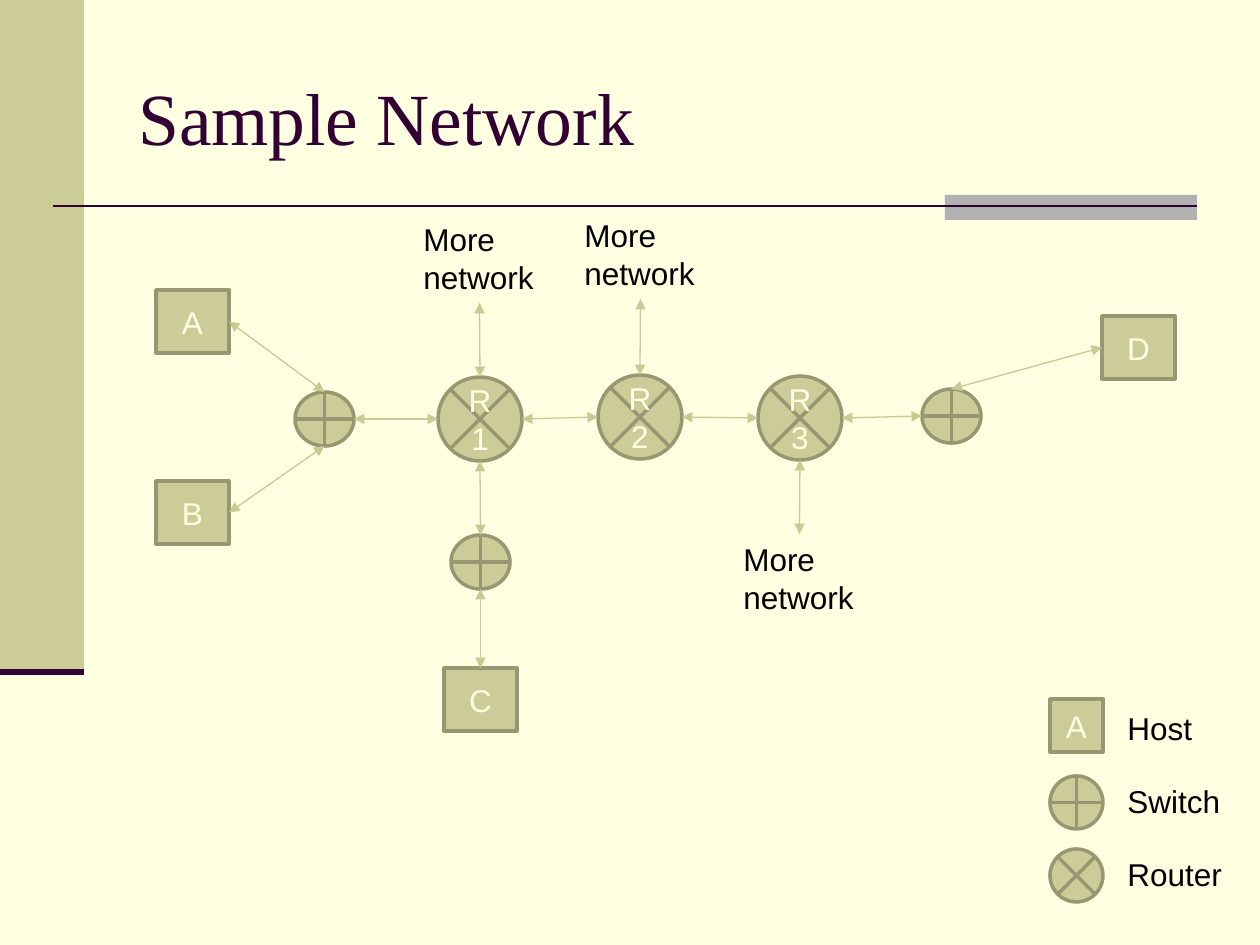
from dataclasses import dataclass
from enum import IntEnum

from pptx import Presentation
from pptx.dml.color import RGBColor
from pptx.enum.shapes import MSO_CONNECTOR, MSO_SHAPE, MSO_SHAPE_TYPE
from pptx.enum.text import MSO_ANCHOR, PP_ALIGN
from pptx.oxml.ns import qn
from pptx.util import Emu, Pt
from lxml.etree import SubElement

CREAM = RGBColor(0xFF, 0xFF, 0xE1)
KHAKI = RGBColor(0xCC, 0xCC, 0x99)
OLIVE = RGBColor(0x97, 0x97, 0x71)
LINK = RGBColor(0xC9, 0xC9, 0x94)
GRAY = RGBColor(0xB2, 0xB2, 0xB2)
PLUM = RGBColor(0x33, 0x00, 0x33)
BLACK = RGBColor(0x00, 0x00, 0x00)

HOST = MSO_SHAPE.RECTANGLE
SWITCH = MSO_SHAPE.FLOWCHART_OR
ROUTER = MSO_SHAPE.FLOWCHART_SUMMING_JUNCTION
PIXELS_PER_INCH = 126


class Side(IntEnum):
    TOP = 0
    LEFT = 1
    BOTTOM = 2
    RIGHT = 3


@dataclass(frozen=True)
class Node:
    name: str
    kind: MSO_SHAPE
    left: int
    top: int
    width: int
    height: int
    label: str = ""


@dataclass(frozen=True)
class Label:
    name: str
    text: str
    left: int
    top: int
    width: int
    height: int


@dataclass(frozen=True)
class Link:
    start: str
    start_side: Side
    end: str
    end_side: Side


def host(name: str, left: int, top: int) -> Node:
    return Node(name, HOST, left, top, 73, 63, name)


def switch(name: str, left: int, top: int) -> Node:
    return Node(name, SWITCH, left, top, 59, 54)


def router(name: str, left: int, top: int) -> Node:
    return Node(name, ROUTER, left, top, 84, 84, name)


def legend_node(name: str, kind: MSO_SHAPE, top: int, label: str = "") -> Node:
    return Node(name, kind, 1050, top, 53, 53, label)


def more_network(name: str, left: int, top: int) -> Label:
    return Label(name, "More\nnetwork", left, top, 137, 89)


NODES = [
    host("A", 156, 290), host("B", 156, 481),
    host("C", 444, 668), host("D", 1102, 316),
    router("R1", 438, 377), router("R2", 598, 375), router("R3", 758, 376),
    switch("west", 295, 392), switch("east", 922, 389), switch("south", 451, 535),
    legend_node("legend host", HOST, 699, "A"),
    legend_node("legend switch", SWITCH, 776),
    legend_node("legend router", ROUTER, 849),
]
LABELS = [
    more_network("above R1", 411, 214),
    more_network("above R2", 572, 210),
    more_network("below R3", 731, 534),
    Label("host label", "Host", 1115, 703, 91, 50),
    Label("switch label", "Switch", 1115, 776, 120, 50),
    Label("router label", "Router", 1115, 849, 121, 50),
]
LINKS = [
    Link("A", Side.RIGHT, "west", Side.TOP),
    Link("B", Side.RIGHT, "west", Side.BOTTOM),
    Link("west", Side.RIGHT, "R1", Side.LEFT),
    Link("R1", Side.RIGHT, "R2", Side.LEFT),
    Link("R2", Side.RIGHT, "R3", Side.LEFT),
    Link("R3", Side.RIGHT, "east", Side.LEFT),
    Link("east", Side.TOP, "D", Side.LEFT),
    Link("C", Side.TOP, "south", Side.BOTTOM),
    Link("south", Side.TOP, "R1", Side.BOTTOM),
    Link("R1", Side.TOP, "above R1", Side.BOTTOM),
    Link("R2", Side.TOP, "above R2", Side.BOTTOM),
    Link("below R3", Side.TOP, "R3", Side.BOTTOM),
]


def px(length: int) -> Emu:
    return Emu(round(length * 914400 / PIXELS_PER_INCH))


def set_text(shape, text: str, color: RGBColor, size: int = 18,
             font_name: str = "Arial", alignment=PP_ALIGN.LEFT) -> None:
    shape.text_frame.text = text
    for paragraph in shape.text_frame.paragraphs:
        paragraph.alignment = alignment
        for run in paragraph.runs:
            run.font.name = font_name
            run.font.size = Pt(size)
            run.font.color.rgb = color


def add_block(slide, kind, left: int, top: int, width: int, height: int, fill: RGBColor):
    """Add a filled preset shape without line or shadow."""
    shape = slide.shapes.add_shape(kind, px(left), px(top), px(width), px(height))
    shape.shadow.inherit = False
    shape.fill.solid()
    shape.fill.fore_color.rgb = fill
    shape.line.fill.background()
    return shape


def add_node(slide, node: Node):
    shape = add_block(slide, node.kind, node.left, node.top, node.width, node.height, KHAKI)
    shape.line.color.rgb = OLIVE
    shape.line.width = Pt(2)
    if node.label:
        shape.text_frame.vertical_anchor = MSO_ANCHOR.MIDDLE
        set_text(shape, node.label, CREAM, alignment=PP_ALIGN.CENTER)
    return shape


def add_label(slide, label: Label):
    box = slide.shapes.add_textbox(px(label.left), px(label.top),
                                   px(label.width), px(label.height))
    box.text_frame.word_wrap = False
    set_text(box, label.text, BLACK)
    return box


def add_line(slide, start: tuple, end: tuple, color: RGBColor, width: float):
    line = slide.shapes.add_connector(MSO_CONNECTOR.STRAIGHT, *start, *end)
    line.line.color.rgb = color
    line.line.width = Pt(width)
    SubElement(line._element.spPr, qn("a:effectLst"))
    return line


def side_middle(shape, side: Side) -> tuple:
    across = {Side.LEFT: 0, Side.RIGHT: 2}.get(side, 1)
    down = {Side.TOP: 0, Side.BOTTOM: 2}.get(side, 1)
    return shape.left + shape.width * across // 2, shape.top + shape.height * down // 2


def is_rectangle(shape) -> bool:
    return shape.shape_type == MSO_SHAPE_TYPE.TEXT_BOX or shape.auto_shape_type == HOST


def add_link(slide, link: Link, shapes: dict) -> None:
    """Draw a two-way arrow, joined wherever it meets a rectangle."""
    start, end = shapes[link.start], shapes[link.end]
    line = add_line(slide, side_middle(start, link.start_side),
                    side_middle(end, link.end_side), LINK, 0.75)
    for tag in ("a:headEnd", "a:tailEnd"):
        SubElement(line._element.spPr.find(qn("a:ln")), qn(tag), type="triangle")
    if is_rectangle(start):
        line.begin_connect(start, link.start_side)
    if is_rectangle(end):
        line.end_connect(end, link.end_side)


def main() -> None:
    presentation = Presentation()
    presentation.slide_width, presentation.slide_height = px(1260), px(945)
    slide = presentation.slides.add_slide(presentation.slide_layouts[6])
    slide.background.fill.solid()
    slide.background.fill.fore_color.rgb = CREAM

    add_block(slide, HOST, 0, 0, 84, 672, KHAKI)
    add_block(slide, HOST, 945, 195, 252, 25, GRAY)
    add_line(slide, (px(53), px(206)), (px(1197), px(206)), PLUM, 1.5)
    add_line(slide, (px(0), px(672)), (px(84), px(672)), PLUM, 3.5)

    title = slide.shapes.add_textbox(px(126), px(38), px(1071), px(157))
    title.text_frame.word_wrap = True
    title.text_frame.vertical_anchor = MSO_ANCHOR.MIDDLE
    set_text(title, "Sample Network", PLUM, 42, "Times New Roman")

    shapes = {node.name: add_node(slide, node) for node in NODES}
    shapes |= {label.name: add_label(slide, label) for label in LABELS}
    for link in LINKS:
        add_link(slide, link, shapes)
    presentation.save("out.pptx")


if __name__ == "__main__":
    main()
